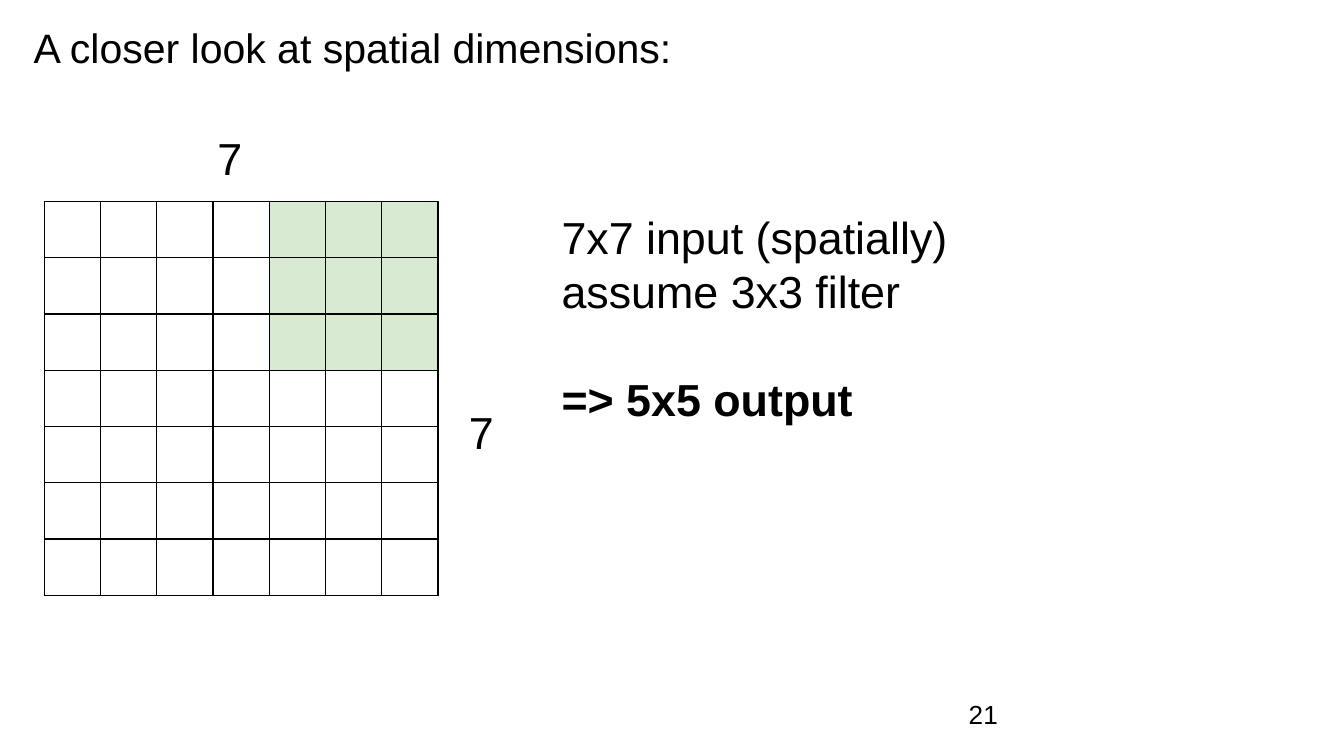
from dataclasses import dataclass

from lxml.etree import SubElement
from pptx import Presentation
from pptx.dml.color import RGBColor as Color
from pptx.enum.text import MSO_ANCHOR as Anchor, MSO_AUTO_SIZE as AutoSize, PP_ALIGN as Align
from pptx.oxml.ns import qn
from pptx.util import Inches, Pt


@dataclass(frozen=True)
class Theme:
    font: str = "Arial"
    ink: str = "000000"
    paper: str = "FFFFFF"
    filter: str = "D9EAD3"
    title: int = 22
    body: int = 24
    number: int = 14
    border: float = 0.75
    inset: float = 0.1


THEME = Theme()
SLIDE_WIDTH = 10
SLIDE_HEIGHT = SLIDE_WIDTH * 9 / 16
TITLE_ONLY = 5
GRID_SIZE = 7
FILTER_SIZE = 3


def write(shape, lines, size=THEME.body, anchor=Anchor.TOP, bold_last=False, gap_last=0):
    """Fill a shape with one paragraph per line; the last may be bold and set apart."""
    frame = shape.text_frame
    frame.word_wrap = True
    frame.auto_size = AutoSize.NONE
    frame.vertical_anchor = anchor
    frame.margin_left = frame.margin_right = Inches(THEME.inset)
    frame.margin_top = frame.margin_bottom = Inches(THEME.inset)
    frame.text = "\n".join(lines)
    for para in frame.paragraphs:
        para.alignment = Align.LEFT
        para.line_spacing = 1.0
        para.space_before = Pt(0)
        for span in para.runs:
            span.font.name = THEME.font
            span.font.size = Pt(size)
            span.font.color.rgb = Color.from_string(THEME.ink)
    last = frame.paragraphs[-1]
    last.space_before = Pt(gap_last)
    last.runs[0].font.bold = bold_last


def add_text(page, box, lines, **text_format):
    shape = page.shapes.add_textbox(*map(Inches, box))
    write(shape, lines, **text_format)


def place_title(page, box, text):
    title = page.shapes.title
    title.left, title.top, title.width, title.height = map(Inches, box)
    write(title, [text], size=THEME.title)


def outline_cell(cell):
    properties = cell._tc.get_or_add_tcPr()
    for position, side in enumerate(("a:lnL", "a:lnR", "a:lnT", "a:lnB")):
        line = SubElement(properties, qn(side), w=str(Pt(THEME.border)))
        fill = SubElement(line, qn("a:solidFill"))
        SubElement(fill, qn("a:srgbClr"), val=THEME.ink)
        properties.remove(line)
        properties.insert(position, line)


def add_input_grid(page, box):
    """Draw the input with the filter over its top right corner, and its side lengths."""
    left, top, width, height = box
    table = page.shapes.add_table(GRID_SIZE, GRID_SIZE, *map(Inches, box)).table
    table.first_row = table.horz_banding = False
    for column in table.columns:
        column.width = Inches(width / GRID_SIZE)
    for row_index, row in enumerate(table.rows):
        row.height = Inches(height / GRID_SIZE)
        for column_index, cell in enumerate(row.cells):
            covered = row_index < FILTER_SIZE and column_index >= GRID_SIZE - FILTER_SIZE
            cell.margin_top = cell.margin_bottom = 0
            cell.fill.solid()
            cell.fill.fore_color.rgb = Color.from_string(THEME.filter if covered else THEME.paper)
            outline_cell(cell)
    add_text(page, (left + 1.19, top - 0.63, 0.6, 0.5), [str(GRID_SIZE)])
    add_text(page, (left + width + 0.13, top + 1.41, 0.64, 0.31), [str(GRID_SIZE)])


def build_slide(deck):
    page = deck.slides.add_slide(deck.slide_layouts[TITLE_ONLY])
    page.background.fill.solid()
    page.background.fill.fore_color.rgb = Color.from_string(THEME.paper)
    place_title(page, (0.15, 0.07, 9.16, 0.66), "A closer look at spatial dimensions:")
    add_input_grid(page, (0.33, 1.5, 2.93, 2.93))
    add_text(page, (4.08, 1.46, 5.6, 2.01),
             ["7x7 input (spatially)", "assume 3x3 filter", "=> 5x5 output"],
             bold_last=True, gap_last=29)
    add_text(page, (7.11, 5.1, 0.6, 0.43), ["21"], size=THEME.number, anchor=Anchor.MIDDLE)


def main():
    deck = Presentation()
    deck.slide_width, deck.slide_height = Inches(SLIDE_WIDTH), Inches(SLIDE_HEIGHT)
    build_slide(deck)
    deck.save("out.pptx")


if __name__ == "__main__":
    main()
